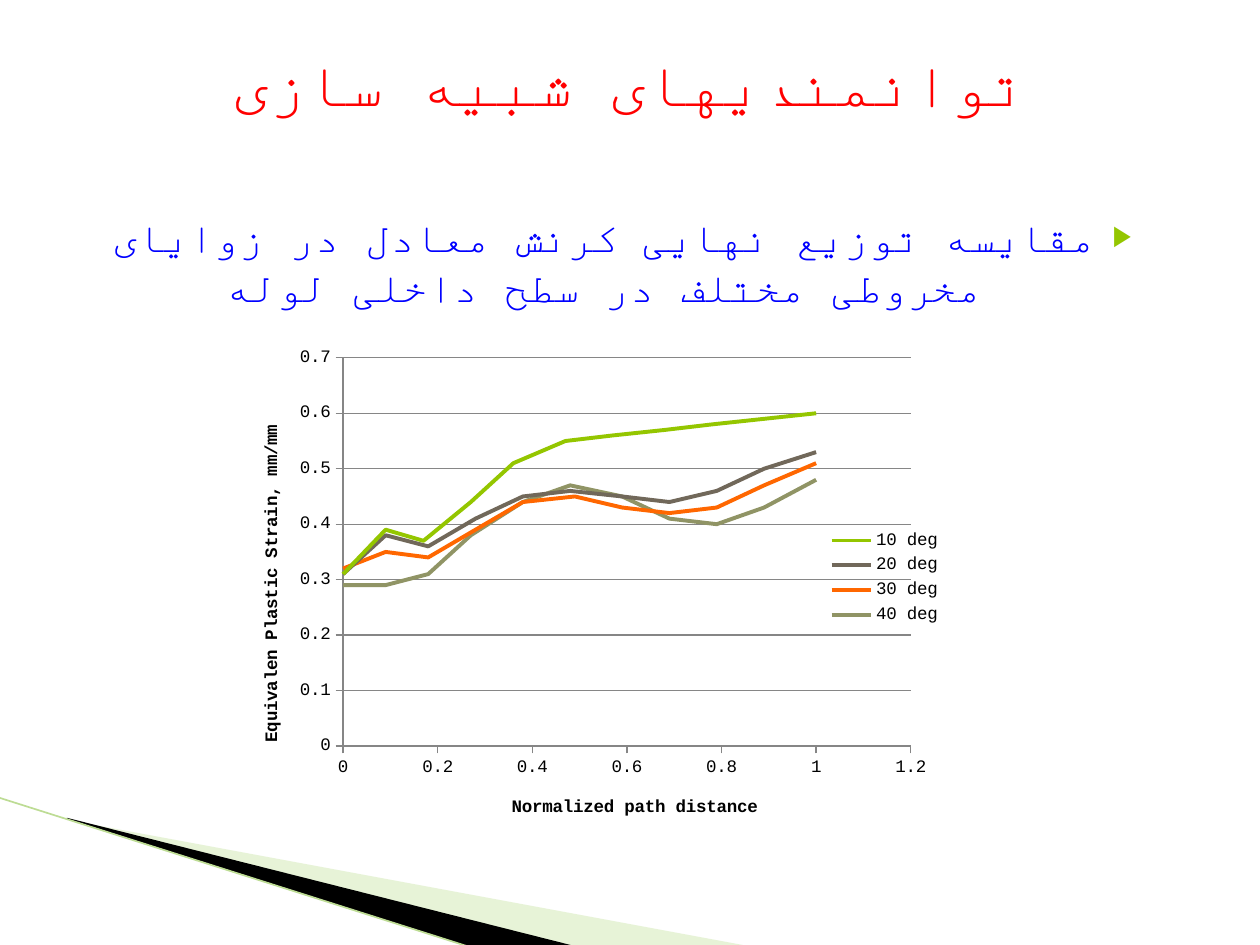
from lxml import etree
from pptx import Presentation
from pptx.chart.data import XyChartData
from pptx.dml.color import RGBColor
from pptx.enum.chart import XL_CHART_TYPE as ChartType, XL_LEGEND_POSITION as LegendPosition
from pptx.enum.chart import XL_TICK_MARK as TickMark
from pptx.enum.shapes import MSO_CONNECTOR as Connector
from pptx.enum.text import MSO_ANCHOR as Anchor, MSO_AUTO_SIZE as AutoSize, PP_ALIGN as Align
from pptx.oxml.ns import qn
from pptx.util import Inches, Pt

FONT = "Courier New"
AXIS_GRAY = "868686"
SERIES = [
    ("10 deg", "94C600",
     [0, 0.09, 0.17, 0.27, 0.36, 0.47, 0.57, 0.68, 0.78, 0.89, 1],
     [0.31, 0.39, 0.37, 0.44, 0.51, 0.55, 0.56, 0.57, 0.58, 0.59, 0.6]),
    ("20 deg", "71685A",
     [0, 0.09, 0.18, 0.28, 0.38, 0.48, 0.59, 0.69, 0.79, 0.89, 1],
     [0.31, 0.38, 0.36, 0.41, 0.45, 0.46, 0.45, 0.44, 0.46, 0.5, 0.53]),
    ("30 deg", "FF6700",
     [0, 0.09, 0.18, 0.28, 0.38, 0.49, 0.59, 0.69, 0.79, 0.89, 1],
     [0.32, 0.35, 0.34, 0.39, 0.44, 0.45, 0.43, 0.42, 0.43, 0.47, 0.51]),
    ("40 deg", "909465",
     [0, 0.09, 0.18, 0.27, 0.38, 0.48, 0.59, 0.69, 0.79, 0.89, 1],
     [0.29, 0.29, 0.31, 0.38, 0.44, 0.47, 0.45, 0.41, 0.4, 0.43, 0.48]),
]


def rgb(color):
    return RGBColor.from_string(color)


def add_element(parent, tag, **attributes):
    element = etree.SubElement(parent, qn(tag))
    for name, value in attributes.items():
        element.set(name, str(value))
    return element


def place(shape, box):
    shape.left, shape.top, shape.width, shape.height = (Inches(value) for value in box)


def write_text(text_frame, text, size, color="000000", bold=True, align=Align.CENTER):
    paragraph = text_frame.paragraphs[0]
    paragraph.alignment = align
    run = paragraph.add_run()
    run.text = text
    font = run.font
    font.size, font.bold, font.name = Pt(size), bold, FONT
    font.color.rgb = rgb(color)
    add_element(font._element, "a:cs", typeface=FONT)
    return paragraph


def add_wedge(slide, points, color, opacity=100):
    corners = [(Inches(x), Inches(y)) for x, y in points]
    builder = slide.shapes.build_freeform(*corners[0], scale=1.0)
    builder.add_line_segments(corners[1:], close=True)
    wedge = builder.convert_to_shape()
    wedge.shadow.inherit = False
    wedge.line.fill.background()
    wedge.fill.solid()
    wedge.fill.fore_color.rgb = rgb(color)
    if opacity < 100:
        fill_color = wedge.fill._xPr.find(qn("a:solidFill"))[0]
        add_element(fill_color, "a:alpha", val=opacity * 1000)


def add_corner_decoration(slide, box):
    left, top, width, height = box
    right, bottom = left + width, top + height
    add_wedge(slide, [(0.55, 6.51), (right, bottom), (4.56, bottom), (0.55, 6.5)], "C3E19D", 40)
    add_wedge(slide, [(0.53, 6.49), (4.57, bottom), (3.72, bottom), (0.54, 6.5)], "000000")
    edge = slide.shapes.add_connector(
        Connector.STRAIGHT, Inches(left), Inches(top), Inches(3.71), Inches(bottom))
    edge.line.color.rgb = rgb("BDDC94")
    edge.line.width = Pt(0.95)
    add_element(edge._element.spPr, "a:effectLst")


def fill_title(slide, box):
    title = slide.shapes.title
    place(title, box)
    title.text_frame.vertical_anchor = Anchor.MIDDLE
    title.text_frame.auto_size = AutoSize.NONE
    write_text(title.text_frame, "توانمندیهای شبیه سازی", 36, "FF0000")


def fill_body(slide, box):
    body = slide.placeholders[1]
    place(body, box)
    body.text_frame.auto_size = AutoSize.NONE
    paragraph = write_text(
        body.text_frame,
        "مقایسه توزیع نهایی کرنش معادل در زوایای مخروطی مختلف در سطح داخلی لوله",
        24, "0000FF")
    paragraph.space_before = Pt(4)
    properties = paragraph._p.get_or_add_pPr()
    for name, value in (("marL", Inches(0.4)), ("indent", Inches(-0.28)), ("rtl", 1)):
        properties.set(name, str(value))
    add_element(add_element(properties, "a:buClr"), "a:srgbClr", val="94C600")
    add_element(properties, "a:buSzPct", val=68000)
    add_element(properties, "a:buFont", typeface="Arial")
    add_element(properties, "a:buChar", char="▶")


def set_layout(parent, index, **position):
    for old_layout in parent.findall(qn("c:layout")):
        parent.remove(old_layout)
    layout = etree.Element(qn("c:layout"))
    manual = add_element(layout, "c:manualLayout")
    if "w" in position:
        add_element(manual, "c:layoutTarget", val="inner")
    for name in ("xMode", "yMode"):
        add_element(manual, f"c:{name}", val="edge")
    for name, value in position.items():
        add_element(manual, f"c:{name}", val=value)
    parent.insert(index, layout)


def format_axis(axis, title, maximum, step, title_position):
    axis.minimum_scale, axis.maximum_scale, axis.major_unit = 0, maximum, step
    axis.major_tick_mark, axis.minor_tick_mark = TickMark.OUTSIDE, TickMark.NONE
    axis.tick_labels.number_format = "General"
    axis.tick_labels.number_format_is_linked = False
    axis.format.line.color.rgb = rgb(AXIS_GRAY)
    write_text(axis.axis_title.text_frame, title, 10)
    set_layout(axis.axis_title._element, 1, **title_position)


def add_strain_chart(slide, box):
    data = XyChartData()
    for name, _, distances, strains in SERIES:
        series = data.add_series(name)
        for distance, strain in zip(distances, strains):
            series.add_data_point(distance, strain)
    chart = slide.shapes.add_chart(
        ChartType.XY_SCATTER_SMOOTH_NO_MARKERS, *(Inches(value) for value in box), data).chart
    chart.has_title = False
    chart.font.size, chart.font.name = Pt(10), FONT
    chart.font.color.rgb = rgb("000000")
    chart.plots[0].vary_by_categories = False
    for series, (_, color, _, _) in zip(chart.plots[0].series, SERIES):
        series.smooth = True
        series.format.line.width = Pt(2.25)
        series.format.line.color.rgb = rgb(color)

    format_axis(chart.category_axis, "Normalized path distance", 1.2, 0.2, {"x": 0.39, "y": 0.93})
    format_axis(chart.value_axis, "Equivalen Plastic Strain, mm/mm", 0.7, 0.1,
                {"x": 0.05, "y": 0.18})
    chart.category_axis.has_major_gridlines = False
    chart.value_axis.has_major_gridlines = True
    chart.value_axis.major_gridlines.format.line.color.rgb = rgb(AXIS_GRAY)

    chart.has_legend = True
    chart.legend.position = LegendPosition.RIGHT
    chart.legend.include_in_layout = False
    set_layout(chart.legend._element, 1, x=0.82, y=0.39)
    plot_area = chart._chartSpace.chart.plotArea
    set_layout(plot_area, 0, x=0.166, y=0.051, w=0.769, h=0.784)


def main():
    presentation = Presentation()
    presentation.slide_width, presentation.slide_height = Inches(10), Inches(7.5)
    slide = presentation.slides.add_slide(presentation.slide_layouts[1])
    add_corner_decoration(slide, (-0.01, 6.33, 5.96, 1.18))
    fill_body(slide, (0.5, 1.62, 9, 4.95))
    fill_title(slide, (0.5, 0.02, 9, 1.25))
    add_strain_chart(slide, (1.75, 2.64, 5.86, 3.93))
    presentation.save("out.pptx")


if __name__ == "__main__":
    main()
